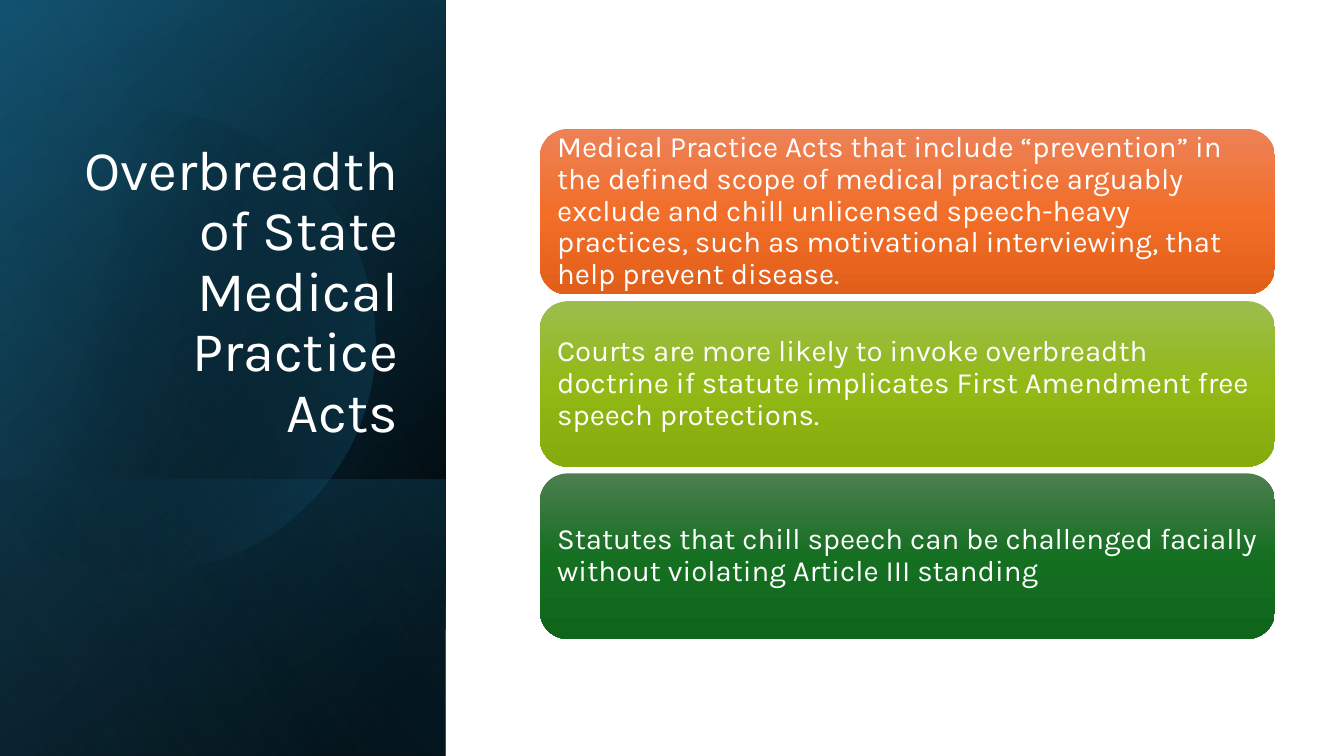
from dataclasses import dataclass

from lxml import etree
from pptx import Presentation
from pptx import util as u
from pptx.dml.color import RGBColor
from pptx.enum import shapes, text
from pptx.oxml.ns import qn

FONT = "Karla"
SLIDE_W, SLIDE_H = 33.87, 19.05
PANEL_W = 11.23
CARD_LEFT, CARD_TOP, CARD_W, CARD_H, CARD_PITCH = 13.61, 3.25, 18.52, 4.17, 4.34


@dataclass
class Stop:
    pos: int
    color: str
    opacity: int = 100


@dataclass
class Panel:
    top: float
    angle: int
    stops: list[Stop]


@dataclass
class Card:
    words: str
    colors: tuple[str, str, str]


PANELS = [
    Panel(0, 50, [Stop(8, "000000"), Stop(100, "104862")]),
    Panel(0, 30, [Stop(0, "000000", 0), Stop(99, "156082", 46)]),
    Panel(12.09, 130, [Stop(2, "156082", 29), Stop(100, "000000", 30)]),
]
SHEEN = Panel(0, 120, [Stop(0, "000000", 0), Stop(99, "46B1E1", 11)])

DISC_START = (0, 4.09)
DISC_CURVES = [
    ((0.58, 3.61), (1.27, 3.25), (2.03, 3.02)),
    ((2.62, 2.87), (3.2, 2.79), (3.78, 2.79)),
    ((6.25, 2.84), (8.51, 4.5), (9.22, 6.99)),
    ((10.11, 10.08), (8.33, 13.28), (5.26, 14.17)),
    ((3.33, 14.73), (1.35, 14.25), (0, 13.1)),
]
DISC_STOPS = [Stop(29, "000000", 0), Stop(100, "156082", 43)]

CARDS = [
    Card("Medical Practice Acts that include “prevention” in the defined scope of "
         "medical practice arguably exclude and chill unlicensed speech-heavy practices, "
         "such as motivational interviewing, that help prevent disease.",
         ("ED8257", "F26E29", "E25F1A")),
    Card("Courts are more likely to invoke overbreadth doctrine if statute implicates "
         "First Amendment free speech protections.",
         ("9CBD4E", "92B916", "85AB0D")),
    Card("Statutes that chill speech can be challenged facially without violating "
         "Article III standing",
         ("4D7E50", "156F21", "0F661B")),
]


def paint(sp, stops: list[Stop], angle: int) -> None:
    """Give a shape a linear gradient, clockwise angle, with no line or shadow."""
    sp.shadow.inherit = False
    sp.line.fill.background()
    sp.fill.gradient()
    grad = sp._element.spPr.find(qn("a:gradFill"))
    grad.find(qn("a:lin")).set("ang", str(angle * 60000))
    stop_list = grad.find(qn("a:gsLst"))
    for old in list(stop_list):
        stop_list.remove(old)
    for stop in stops:
        gs = etree.SubElement(stop_list, qn("a:gs"), pos=str(stop.pos * 1000))
        color = etree.SubElement(gs, qn("a:srgbClr"), val=stop.color)
        if stop.opacity < 100:
            etree.SubElement(color, qn("a:alpha"), val=str(stop.opacity * 1000))


def write(tf, words: str, size: int, align) -> None:
    tf.word_wrap = True
    tf.auto_size = text.MSO_AUTO_SIZE.NONE
    p = tf.paragraphs[0]
    p.text = words
    p.alignment = align
    p.line_spacing = 0.9
    p.font.name = FONT
    p.font.size = u.Pt(size)
    p.font.color.rgb = RGBColor.from_string("FFFFFF")


def add_panel(s, panel: Panel) -> None:
    """Draw a panel down to the slide bottom, turned a quarter and mirrored."""
    length = SLIDE_H - panel.top
    shift = (length - PANEL_W) / 2
    sp = s.shapes.add_shape(shapes.MSO_SHAPE.RECTANGLE, u.Cm(-shift),
                            u.Cm(panel.top + shift), u.Cm(length), u.Cm(PANEL_W))
    sp.rotation = 90
    sp._element.spPr.xfrm.set("flipH", "1")
    paint(sp, panel.stops, panel.angle)


def curve_points(start, c1, c2, end, steps: int = 24) -> list[tuple[int, int]]:
    """Sample a cubic Bezier curve, leaving out its start."""
    points = []
    for i in range(1, steps + 1):
        t = i / steps
        v = 1 - t
        x, y = (v**3 * a + 3 * v * v * t * b + 3 * v * t * t * c + t**3 * d
                for a, b, c, d in zip(start, c1, c2, end))
        points.append((u.Cm(x), u.Cm(y)))
    return points


def add_disc(s) -> None:
    outline = s.shapes.build_freeform(u.Cm(DISC_START[0]), u.Cm(DISC_START[1]))
    start = DISC_START
    for c1, c2, end in DISC_CURVES:
        outline.add_line_segments(curve_points(start, c1, c2, end), close=False)
        start = end
    outline.add_line_segments([], close=True)
    paint(outline.convert_to_shape(), DISC_STOPS, 14)


def add_title(s) -> None:
    title = s.shapes.title
    title.left, title.top = u.Cm(1.63), u.Cm(4.67)
    title.width, title.height = u.Cm(8.66), u.Cm(6.65)
    title.text_frame.vertical_anchor = text.MSO_ANCHOR.BOTTOM
    write(title.text_frame, "Overbreadth of State Medical Practice Acts", 40,
          text.PP_ALIGN.RIGHT)
    s.shapes._spTree.append(title._element)  # in front of the panels


def add_card(s, card: Card, row: int) -> None:
    sp = s.shapes.add_shape(shapes.MSO_SHAPE.ROUNDED_RECTANGLE, u.Cm(CARD_LEFT),
                            u.Cm(CARD_TOP + row * CARD_PITCH), u.Cm(CARD_W), u.Cm(CARD_H))
    paint(sp, [Stop(pos, c) for pos, c in zip((0, 50, 100), card.colors)], 90)
    tf = sp.text_frame
    tf.margin_left = tf.margin_right = tf.margin_top = tf.margin_bottom = u.Cm(0.23)
    tf.vertical_anchor = text.MSO_ANCHOR.MIDDLE
    write(tf, card.words, 21, text.PP_ALIGN.LEFT)


def main() -> None:
    prs = Presentation()
    prs.slide_width, prs.slide_height = u.Cm(SLIDE_W), u.Cm(SLIDE_H)
    s = prs.slides.add_slide(prs.slide_layouts.get_by_name("Title Only"))
    for panel in PANELS:
        add_panel(s, panel)
    add_disc(s)
    add_panel(s, SHEEN)
    add_title(s)
    for row, card in enumerate(CARDS):
        add_card(s, card, row)
    prs.save("out.pptx")


if __name__ == "__main__":
    main()
